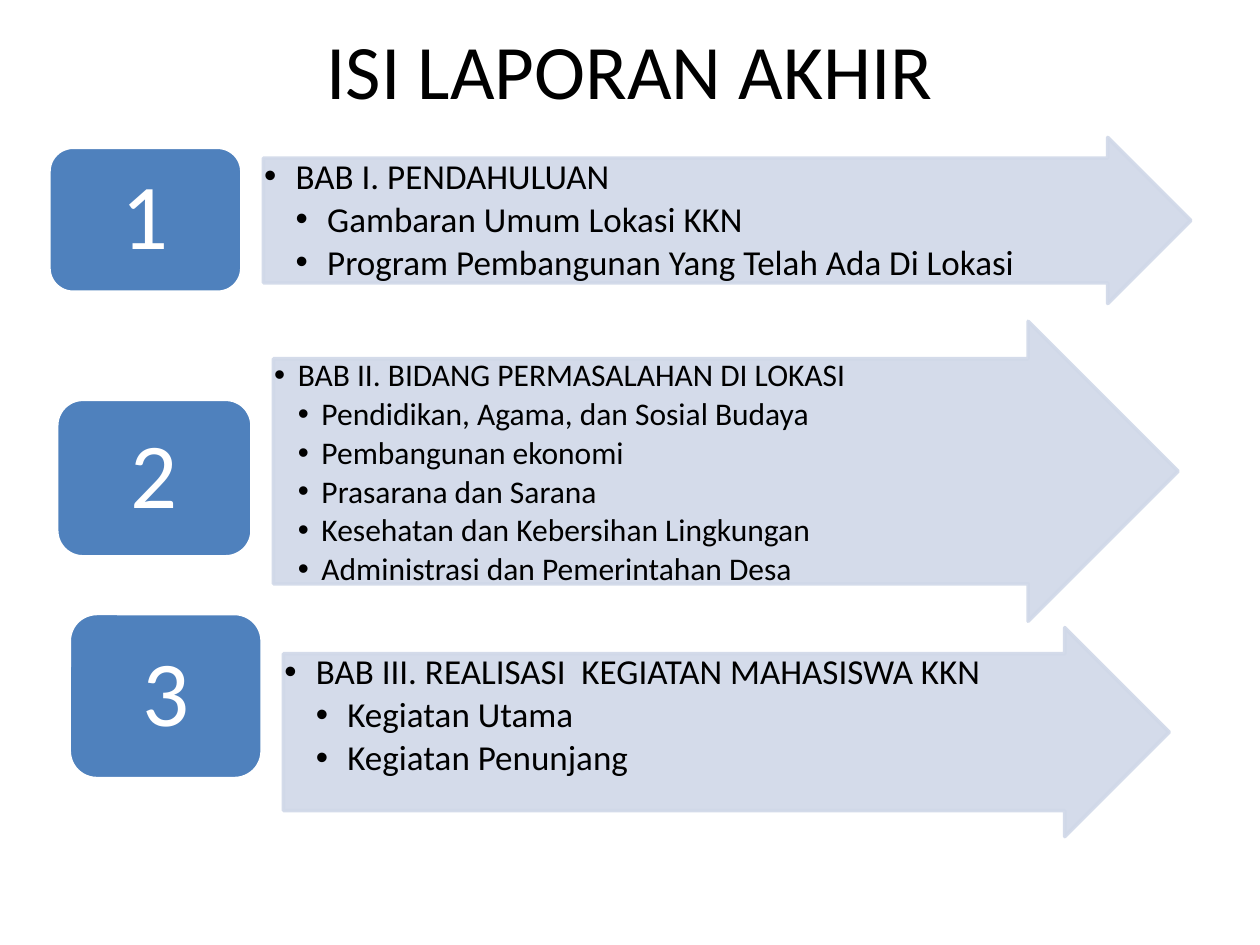
from pptx import Presentation
from pptx.dml.color import RGBColor
from pptx.enum.shapes import MSO_SHAPE
from pptx.enum.text import MSO_ANCHOR, PP_ALIGN
from pptx.oxml.ns import qn
from pptx.util import Pt
from lxml.etree import SubElement

FONT = "Calibri"
BLACK, WHITE, BADGE_BLUE, ARROW_BLUE = "000000", "FFFFFF", "4F81BD", "D0D8E8"

CHAPTERS = [
    {
        "arrow": (150.5, 78.5, 530, 95), "badge": (28, 84.2, 110.2, 82.8),
        "size": 20, "indent": 18,
        "heading": "BAB I. PENDAHULUAN",
        "topics": ["Gambaran Umum Lokasi KKN",
                   "Program Pembangunan Yang Telah Ada Di Lokasi"],
    },
    {
        "arrow": (156.2, 183.6, 517, 171.4), "badge": (32.4, 228.2, 111.6, 90),
        "size": 18, "indent": 13.5,
        "heading": "BAB II. BIDANG PERMASALAHAN DI LOKASI",
        "topics": ["Pendidikan, Agama, dan Sosial Budaya",
                   "Pembangunan ekonomi",
                   "Prasarana dan Sarana",
                   "Kesehatan dan Kebersihan Lingkungan",
                   "Administrasi dan Pemerintahan Desa"],
    },
    {
        "arrow": (162, 358.6, 506.2, 119.5), "badge": (39.6, 350.6, 110.2, 94.3),
        "size": 20, "indent": 18,
        "heading": "BAB III. REALISASI  KEGIATAN MAHASISWA KKN",
        "topics": ["Kegiatan Utama", "Kegiatan Penunjang"],
    },
]


def color(hex_value):
    """Return the colour for a hex string."""
    return RGBColor.from_string(hex_value)


def add_panel(shapes, preset, box, fill, line):
    """Add a filled preset shape with a 2 pt outline."""
    panel = shapes.add_shape(preset, *map(Pt, box))
    panel.shadow.inherit = False
    panel.fill.solid()
    panel.fill.fore_color.rgb = color(fill)
    panel.line.color.rgb = color(line)
    panel.line.width = Pt(2)
    return panel


def add_text_frame(shapes, box, margins, anchor):
    """Add a wrapping text box and return its text frame."""
    frame = shapes.add_textbox(*map(Pt, box)).text_frame
    frame.word_wrap = True
    frame.vertical_anchor = anchor
    frame.margin_left = frame.margin_right = Pt(margins[0])
    frame.margin_top = frame.margin_bottom = Pt(margins[1])
    return frame


def write(paragraph, text, size, hex_value):
    """Set the paragraph's text and format its run."""
    paragraph.text = text
    font = paragraph.runs[0].font
    font.name, font.size = FONT, Pt(size)
    font.color.rgb = color(hex_value)


def set_spacing(paragraph, after_percent):
    """Tighten the lines and add proportional space after the paragraph."""
    paragraph.line_spacing = 0.9
    properties = paragraph._p.get_or_add_pPr()
    space_after = SubElement(properties, qn("a:spcAft"))
    SubElement(space_after, qn("a:spcPct"), val=str(after_percent * 1000))
    return properties


def add_bullet(paragraph, level, indent, after_percent):
    """Give the paragraph a hanging bullet at the given level."""
    paragraph.level = level
    properties = set_spacing(paragraph, after_percent)
    properties.set("marL", str(Pt(indent * level)))
    properties.set("indent", str(-Pt(indent)))
    SubElement(properties, qn("a:buFont"), typeface="Arial")
    SubElement(properties, qn("a:buChar"), char="•")


def add_title(slide, box, text):
    """Place the centred slide title in the box."""
    frame = add_text_frame(slide.shapes, box, (7.2, 3.6), MSO_ANCHOR.MIDDLE)
    title = frame.paragraphs[0]
    write(title, text, 44, BLACK)
    title.alignment = PP_ALIGN.CENTER


def add_arrow(shapes, box, chapter):
    """Place the arrow in the box with the chapter's outline on its shaft."""
    arrow = add_panel(shapes, MSO_SHAPE.RIGHT_ARROW, box, ARROW_BLUE, ARROW_BLUE)
    arrow.adjustments[0], arrow.adjustments[1] = 0.75, 0.5
    for tint in arrow._element.spPr.iter(qn("a:srgbClr")):
        SubElement(tint, qn("a:alpha"), val="90000")

    left, top, width, height = box
    shaft = (left, top + height / 8, width - height * 0.375, height * 0.75)
    frame = add_text_frame(shapes, shaft, (0.5, 0.5), MSO_ANCHOR.TOP)
    entries = [chapter["heading"], *chapter["topics"]]
    for index, entry in enumerate(entries):
        paragraph = frame.add_paragraph() if index else frame.paragraphs[0]
        write(paragraph, entry, chapter["size"], BLACK)
        add_bullet(paragraph, 2 if index else 1, chapter["indent"], 15)


def add_badge(shapes, box, number):
    """Place the rounded badge in the box with its number inside."""
    add_panel(shapes, MSO_SHAPE.ROUNDED_RECTANGLE, box, BADGE_BLUE, WHITE)
    left, top, width, height = box
    inset = height * 0.05
    inner = (left + inset, top + inset, width - 2 * inset, height - 2 * inset)
    frame = add_text_frame(shapes, inner, (16, 8), MSO_ANCHOR.MIDDLE)
    numeral = frame.paragraphs[0]
    write(numeral, str(number), 53, WHITE)
    numeral.alignment = PP_ALIGN.CENTER
    set_spacing(numeral, 35)


def main():
    """Build the slide and save it."""
    presentation = Presentation()
    presentation.slide_width, presentation.slide_height = Pt(720), Pt(540)
    slide = presentation.slides.add_slide(presentation.slide_layouts[6])
    add_title(slide, (36, 0, 648, 78), "ISI LAPORAN AKHIR")
    chapter_list = slide.shapes.add_group_shape().shapes
    for number, chapter in enumerate(CHAPTERS, 1):
        add_arrow(chapter_list, chapter["arrow"], chapter)
        add_badge(chapter_list, chapter["badge"], number)
    presentation.save("out.pptx")


if __name__ == "__main__":
    main()
